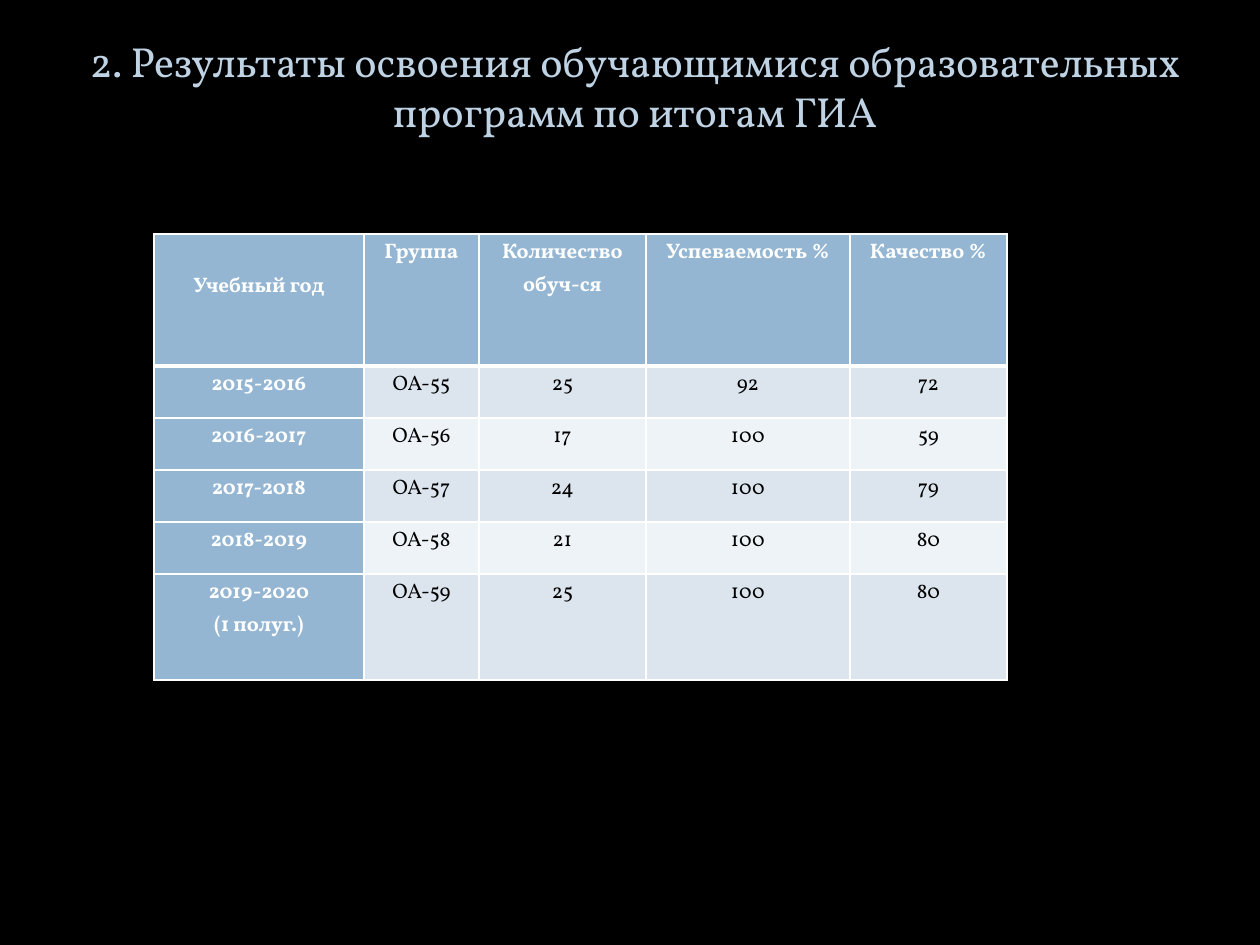
from collections import namedtuple
from dataclasses import dataclass

from lxml import etree
from pptx import Presentation
from pptx.dml.color import RGBColor
from pptx.enum.text import MSO_ANCHOR, MSO_AUTO_SIZE, PP_ALIGN
from pptx.oxml.ns import qn
from pptx.util import Emu, Pt

CENTER = PP_ALIGN.CENTER
TOP = MSO_ANCHOR.TOP
NO_AUTOFIT = MSO_AUTO_SIZE.NONE
TITLE_ONLY = 5
EMU_PER_PX = 914400 // 126

Box = namedtuple("Box", "left top width height")


@dataclass(frozen=True)
class Theme:
    font: str = "Vollkorn"
    title_size: int = 24
    cell_size: int = 12
    line_spacing: float = 1.15
    background: str = "000000"
    title: str = "BFD3E4"
    accent: str = "94B6D2"
    bands: tuple = ("DCE5EE", "EEF3F7")
    light: str = "FFFFFF"
    dark: str = "000000"
    rule: int = 1
    header_rule: int = 3


THEME = Theme()

TITLE = "2. Результаты освоения обучающимися образовательных программ по итогам ГИА"
COLUMN_WIDTHS = (210, 115, 167, 204, 157)
ROW_HEIGHTS = (132, 52, 52, 52, 52, 106)
CELL_SIDE_MARGIN = 9
HEADER_DROP = 34  # the first heading starts one line lower
ROWS = (
    ("Учебный год", "Группа", "Количество обуч-ся", "Успеваемость %", "Качество %"),
    ("2015-2016", "ОА-55", "25", "92", "72"),
    ("2016-2017", "ОА-56", "17", "100", "59"),
    ("2017-2018", "ОА-57", "24", "100", "79"),
    ("2018-2019", "ОА-58", "21", "100", "80"),
    ("2019-2020\n(1 полуг.)", "ОА-59", "25", "100", "80"),
)


def px(value):
    return Emu(value * EMU_PER_PX)


def place(shape, box):
    shape.left, shape.top, shape.width, shape.height = map(px, box)


def add_span(para, text, size, color, bold=False):
    span = para.add_run()
    span.text = text
    span.font.name = THEME.font
    span.font.size = Pt(size)
    span.font.bold = bold
    span.font.color.rgb = RGBColor.from_string(color)


def set_borders(cell, widths):
    """Draw the cell edges; widths maps an edge tag to points."""
    properties = cell._tc.get_or_add_tcPr()
    for index, (edge, width) in enumerate(widths.items()):
        line = etree.Element(qn(f"a:{edge}"), w=str(Pt(width)))
        fill = etree.SubElement(line, qn("a:solidFill"))
        etree.SubElement(fill, qn("a:srgbClr"), val=THEME.light)
        properties.insert(index, line)


def fill_cell(cell, text, fill, color, bold):
    cell.fill.solid()
    cell.fill.fore_color.rgb = RGBColor.from_string(fill)
    cell.vertical_anchor = TOP
    cell.margin_left = cell.margin_right = px(CELL_SIDE_MARGIN)
    cell.margin_top = cell.margin_bottom = 0
    frame = cell.text_frame
    for index, line in enumerate(text.split("\n")):
        para = frame.add_paragraph() if index else frame.paragraphs[0]
        para.alignment = CENTER
        para.line_spacing = THEME.line_spacing
        add_span(para, line, THEME.cell_size, color, bold)


def add_title(page, box):
    title = page.shapes.title
    place(title, box)
    frame = title.text_frame
    frame.word_wrap = True
    frame.auto_size = NO_AUTOFIT
    frame.vertical_anchor = TOP
    para = frame.paragraphs[0]
    para.alignment = CENTER
    add_span(para, TITLE, THEME.title_size, THEME.title)


def add_results_table(page, box):
    table = page.shapes.add_table(len(ROWS), len(COLUMN_WIDTHS), *map(px, box)).table
    for column, width in zip(table.columns, COLUMN_WIDTHS):
        column.width = px(width)
    for row, height in zip(table.rows, ROW_HEIGHTS):
        row.height = px(height)

    for r, values in enumerate(ROWS):
        for c, text in enumerate(values):
            cell = table.cell(r, c)
            heading = r == 0 or c == 0
            fill = THEME.accent if heading else THEME.bands[(r - 1) % 2]
            color = THEME.light if heading else THEME.dark
            fill_cell(cell, text, fill, color, heading)
            set_borders(cell, {
                "lnL": THEME.rule,
                "lnR": THEME.rule,
                "lnT": THEME.header_rule if r == 1 else THEME.rule,
                "lnB": THEME.header_rule if r == 0 else THEME.rule,
            })
    table.cell(0, 0).margin_top = px(HEADER_DROP)


def main():
    deck = Presentation()
    deck.slide_width, deck.slide_height = px(1260), px(945)
    page = deck.slides.add_slide(deck.slide_layouts[TITLE_ONLY])

    # Background
    page.background.fill.solid()
    page.background.fill.fore_color.rgb = RGBColor.from_string(THEME.background)

    # Heading and exam results
    add_title(page, Box(49, 29, 1172, 115))
    add_results_table(page, Box(154, 234, sum(COLUMN_WIDTHS), sum(ROW_HEIGHTS)))

    deck.save("out.pptx")


if __name__ == "__main__":
    main()
